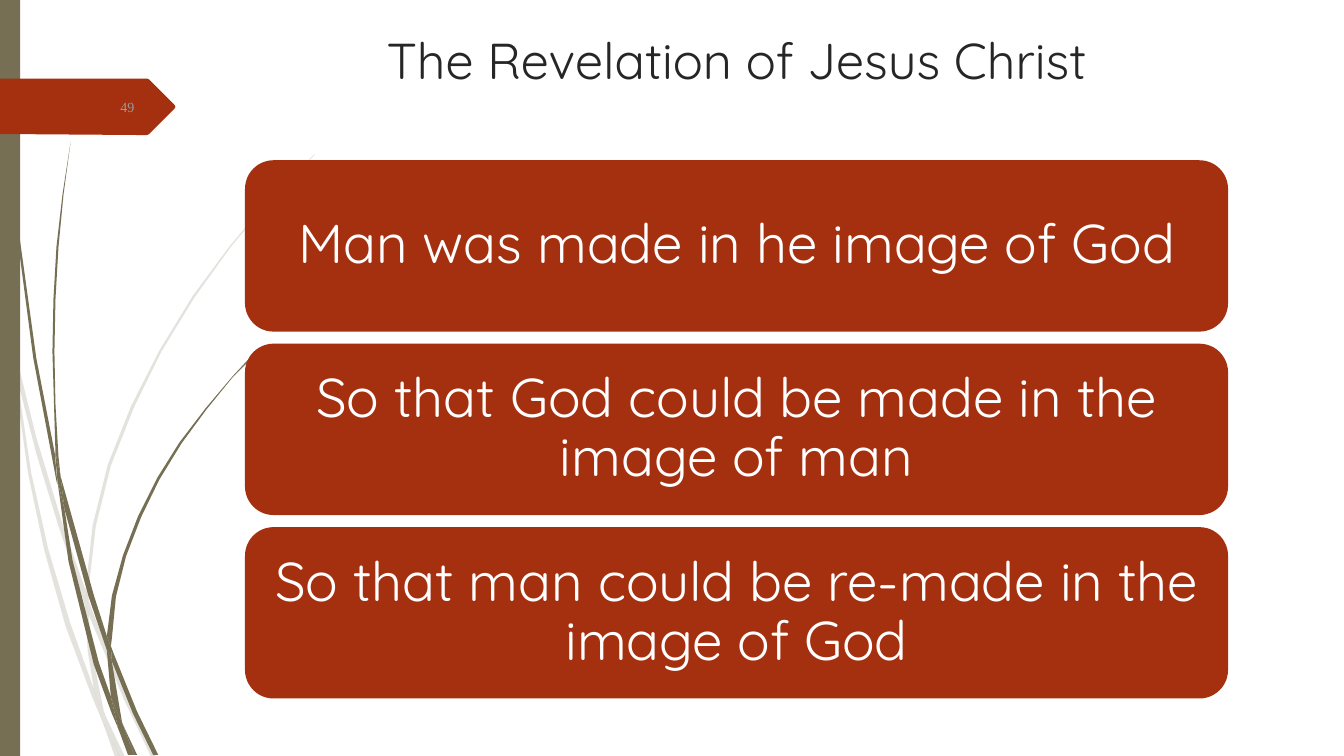
from dataclasses import dataclass

from lxml import etree
from pptx import Presentation
from pptx import util as u
from pptx.dml.color import RGBColor
from pptx.enum import shapes, text
from pptx.oxml import ns


@dataclass(frozen=True)
class Theme:
    rust: str = "A53010"
    olive: str = "766F54"
    ink: str = "262626"
    white: str = "FFFFFF"
    grey: str = "9B9A98"
    body_font: str = "Quicksand"
    number_font: str = "Times New Roman"
    title_size: int = 36
    card_size: int = 39
    number_size: int = 10
    pale_opacity: int = 20


THEME = Theme()

TITLE = "The Revelation of Jesus Christ"
CARDS = [
    "Man was made in he image of God",
    "So that God could be made in the image of man",
    "So that man could be re-made in the image of God",
]

# Outlines of the grass pieces, in inches from the corner of the slide
PALE_GRASS = [
    [(.11, 3.5), (.09, 3.22), (0, 2.82), (0, 2.99), (.1, 3.44)],
    [(.58, 5.22), (.84, 5.99), (.85, 5.86), (.62, 5.2), (.36, 4.34), (.14, 3.45),
     (.17, 3.76), (.36, 4.5)],
    [(.92, 6.07), (.88, 5.96), (.88, 6.1), (1.23, 6.94), (1.5, 7.51), (1.55, 7.51),
     (1.27, 6.92)],
    [(1.19, 7.51), (1.24, 7.51), (1.05, 7.11)],
    [(.93, 6.83), (.7, 6.19), (.48, 5.45), (.31, 4.69), (.17, 3.76), (.11, 3.5), (.28, 4.7),
     (.44, 5.46), (.65, 6.21), (.92, 6.93), (1.01, 7.14), (.99, 7.07)],
    [(.84, 5.99), (.87, 6.46), (.93, 6.83), (.96, 6.92), (1.05, 7.11), (1.03, 7.06),
     (.91, 6.46), (.88, 6.1), (.88, 6.08)],
    [(.88, 5.84), (.95, 5.22), (1.1, 4.62), (1.33, 4.04), (1.6, 3.49), (1.93, 2.95),
     (2.29, 2.45), (2.68, 1.98), (2.9, 1.75), (3.12, 1.54), (3.12, 1.53), (2.89, 1.75),
     (2.68, 1.97), (2.28, 2.44), (1.91, 2.94), (1.58, 3.48), (1.3, 4.03), (1.07, 4.61),
     (.92, 5.21), (.85, 5.84), (.85, 5.86), (.88, 5.96)],
    [(1.01, 7.14), (1.14, 7.51), (1.19, 7.51)],
    [(.88, 6.08), (.88, 6.1), (.88, 5.96), (.85, 5.86), (.84, 5.99)],
    [(.96, 6.92), (.93, 6.83), (.99, 7.07), (1.01, 7.14), (1.19, 7.51), (1.05, 7.11)],
]
DARK_GRASS = [
    [(.07, 1.1), (.17, 2.33), (.33, 3.55), (.56, 4.77), (.57, 4.81), (.55, 4.57),
     (.55, 4.53), (.36, 3.55), (.19, 2.32), (.08, 1.09), (.05, .48), (.03, 0), (.03, .48)],
    [(.88, 5.92), (1.06, 6.45), (1.06, 6.33), (1.06, 6.31), (.93, 5.9), (.6, 4.72),
     (.64, 5.05)],
    [(1.13, 6.49), (1.1, 6.41), (1.11, 6.56), (1.32, 7.08), (1.52, 7.49), (1.57, 7.49),
     (1.36, 7.06)],
    [(1.1, 6.91), (.98, 6.57), (.72, 5.56), (.64, 5.05), (.57, 4.77), (.68, 5.57),
     (.93, 6.59), (1.11, 7.08), (1.17, 7.22), (1.16, 7.17)],
    [(.6, 4.72), (.58, 4.53), (.55, 4.01), (.54, 3.49), (.55, 2.97), (.58, 2.45),
     (.63, 1.93), (.7, 1.41), (.62, 1.93), (.56, 2.45), (.53, 2.97), (.52, 3.49),
     (.55, 4.49)],
    [(1.33, 7.49), (1.36, 7.49), (1.22, 7.19)],
    [(.57, 4.77), (.64, 5.05), (.6, 4.72), (.55, 4.49), (.55, 4.53)],
    [(1.11, 6.33), (1.15, 5.92), (1.25, 5.52), (1.4, 5.13), (1.58, 4.76), (1.8, 4.4),
     (2.05, 4.06), (2.31, 3.74), (2.46, 3.59), (2.61, 3.44), (2.6, 3.44), (2.45, 3.58),
     (2.31, 3.73), (2.04, 4.05), (1.78, 4.39), (1.56, 4.74), (1.37, 5.12), (1.22, 5.51),
     (1.11, 5.91), (1.06, 6.31), (1.1, 6.41)],
    [(1.17, 7.22), (1.27, 7.49), (1.31, 7.49)],
    [(1.06, 6.45), (1.1, 6.91), (1.16, 7.06), (1.22, 7.19), (1.21, 7.16), (1.11, 6.56),
     (1.09, 6.51)],
    [(1.06, 6.45), (1.09, 6.51), (1.11, 6.56), (1.1, 6.41), (1.06, 6.31), (1.06, 6.33)],
    [(1.16, 7.06), (1.1, 6.91), (1.16, 7.17), (1.17, 7.22), (1.3, 7.49), (1.33, 7.49),
     (1.22, 7.19)],
]
TAG_OUTLINE = [(1.73, 1.08), (1.48, 1.33), (1.46, 1.34), (1.36, 1.34), (-.01, 1.33),
               (0, .78), (1.36, .78), (1.46, .78), (1.48, .79), (1.73, 1.04), (1.74, 1.06)]


def paint(shape, color, opacity=100):
    shape.shadow.inherit = False
    shape.fill.solid()
    shape.fill.fore_color.rgb = RGBColor.from_string(color)
    shape.line.fill.background()
    if opacity < 100:
        fill_color = shape.fill._xPr.find(ns.qn("a:solidFill"))[0]
        etree.SubElement(fill_color, ns.qn("a:alpha"), val=str(opacity * 1000))


def add_block(page, kind, box, color):
    shape = page.shapes.add_shape(kind, *map(u.Inches, box))
    paint(shape, color)


def add_outline(page, points, color, opacity=100):
    corners = [(u.Inches(x), u.Inches(y)) for x, y in points]
    builder = page.shapes.build_freeform(*corners[0])
    builder.add_line_segments(corners[1:], close=True)
    paint(builder.convert_to_shape(), color, opacity)


def write(shape, words, font, size, color, align, anchor, inset):
    frame = shape.text_frame
    frame.text = words
    frame.word_wrap = True
    frame.auto_size = text.MSO_AUTO_SIZE.NONE
    frame.vertical_anchor = anchor
    frame.margin_left = frame.margin_right = u.Inches(inset[0])
    frame.margin_top = frame.margin_bottom = u.Inches(inset[1])
    para = frame.paragraphs[0]
    para.alignment = align
    for span in para.runs:
        span.font.name = font
        span.font.size = u.Pt(size)
        span.font.color.rgb = RGBColor.from_string(color)
    return para


def add_grass(page):
    for piece in PALE_GRASS:
        add_outline(page, piece, THEME.olive, THEME.pale_opacity)
    for piece in DARK_GRASS:
        add_outline(page, piece, THEME.olive)


def add_number_tag(page, box, number):
    add_outline(page, TAG_OUTLINE, THEME.rust)
    label = page.shapes.add_textbox(*map(u.Inches, box))
    write(label, number, THEME.number_font, THEME.number_size, THEME.grey,
          text.PP_ALIGN.RIGHT, text.MSO_ANCHOR.MIDDLE, (0.1, 0.05))


def add_cards(page, box, messages, gap=0.12, pad=0.08):
    left, top, width, height = box
    card_height = (height - gap * (len(messages) - 1)) / len(messages)
    for index, message in enumerate(messages):
        card_top = top + index * (card_height + gap)
        add_block(page, shapes.MSO_SHAPE.ROUNDED_RECTANGLE,
                  (left, card_top, width, card_height), THEME.rust)
        label = page.shapes.add_textbox(*map(u.Inches, (
            left + pad, card_top + pad, width - 2 * pad, card_height - 2 * pad)))
        para = write(label, message, THEME.body_font, THEME.card_size, THEME.white,
                     text.PP_ALIGN.CENTER, text.MSO_ANCHOR.MIDDLE, (0.16, 0.16))
        para.line_spacing = 0.9


def set_title(page, box, words):
    title = page.shapes.title
    title.left, title.top, title.width, title.height = map(u.Inches, box)
    write(title, words, THEME.body_font, THEME.title_size, THEME.ink,
          text.PP_ALIGN.CENTER, text.MSO_ANCHOR.TOP, (0.1, 0.05))


def main():
    deck = Presentation()
    deck.slide_width, deck.slide_height = u.Inches(13.33), u.Inches(7.5)
    page = deck.slides.add_slide(deck.slide_layouts[5])

    # Left decoration
    add_grass(page)
    add_block(page, shapes.MSO_SHAPE.RECTANGLE, (0, 0, 0.2, 7.5), THEME.olive)
    add_number_tag(page, (0.58, 0.86, 0.85, 0.4), "49")

    # Title and message cards
    set_title(page, (2.43, 0.24, 9.75, 1.02), TITLE)
    add_cards(page, (2.43, 1.59, 9.75, 5.34), CARDS)

    deck.save("out.pptx")


if __name__ == "__main__":
    main()
